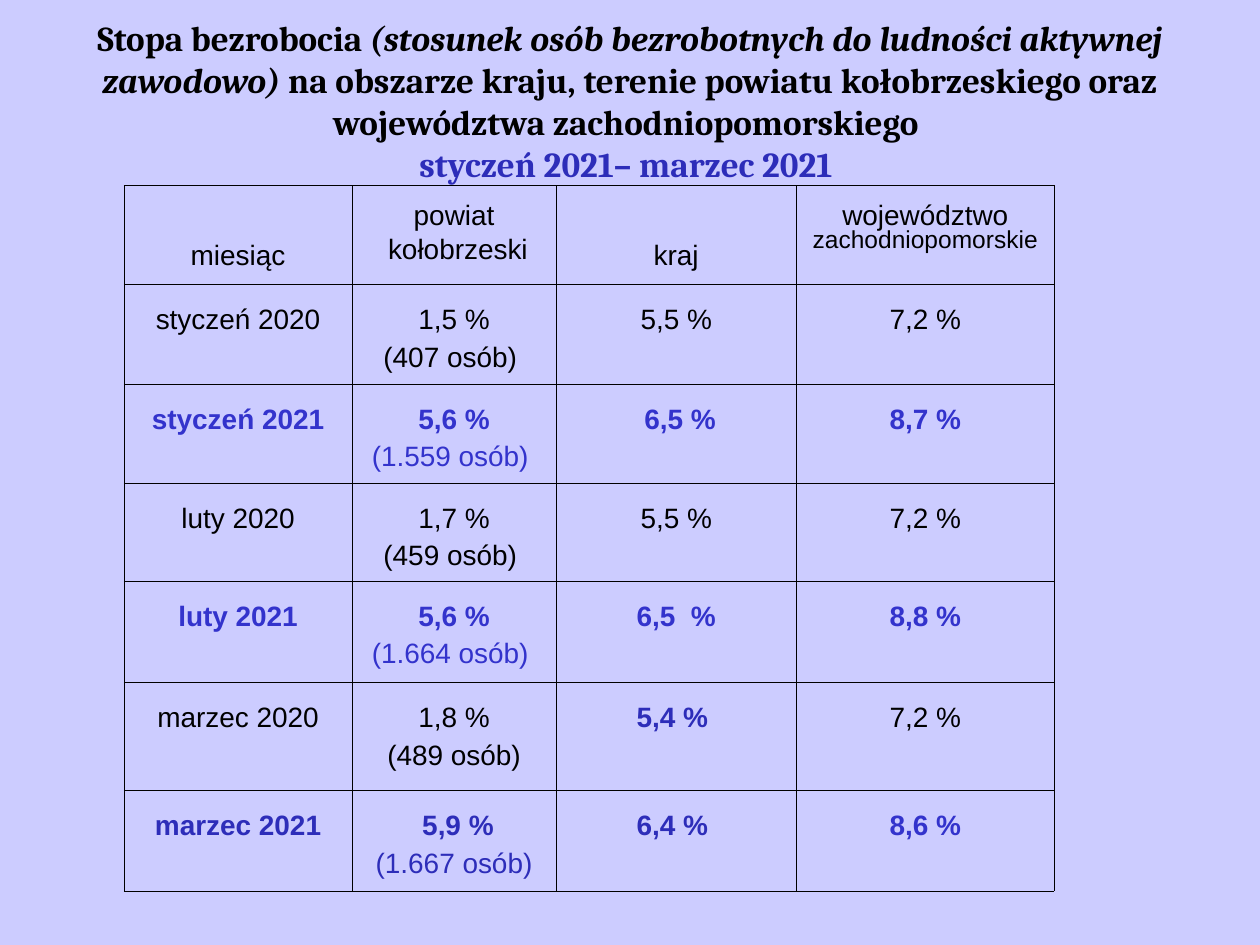
from dataclasses import dataclass

from lxml.etree import SubElement
from pptx import Presentation
from pptx.dml.color import RGBColor
from pptx.enum.text import MSO_ANCHOR, PP_ALIGN
from pptx.oxml.ns import qn
from pptx.util import Pt

BLACK = RGBColor(0x00, 0x00, 0x00)
BLUE = RGBColor(0x33, 0x33, 0xCC)
DARK_BLUE = RGBColor(0x2D, 0x2D, 0xB9)
LAVENDER = RGBColor(0xCC, 0xCC, 0xFF)

COLUMN_WIDTHS = (130.3, 116.6, 137.3, 147.4)
ROW_HEIGHTS = (56.7, 56.7, 56.7, 55.2, 57.8, 61.7, 57.8)
INNER_LINE, OUTER_LINE = 0.11, 0.23
HEADER_TOP, HEADER_LOW_TOP, BODY_TOP = 11.5, 34.4, 14.4


@dataclass(frozen=True)
class Run:
    text: str
    color: RGBColor = BLACK
    bold: bool = False
    italic: bool = False
    size: float = 16


@dataclass(frozen=True)
class CellText:
    paragraphs: tuple[tuple[Run, ...], ...]
    top: float = BODY_TOP
    space_before: float = 7


def header(*lines: tuple[Run, ...], top: float = HEADER_TOP) -> CellText:
    return CellText(lines, top, space_before=5)


def value(text: str, color: RGBColor = BLACK, people: str = "") -> CellText:
    """A cell whose coloured figures are bold, with an optional head count."""
    lines = [(Run(text, color, bold=color != BLACK),)]
    if people:
        lines.append((Run(people, color),))
    return CellText(tuple(lines))


def month_row(month: str, county: str, people: str, country: str, region: str,
              color: RGBColor = BLACK, country_color: RGBColor | None = None,
              region_color: RGBColor | None = None) -> tuple[CellText, ...]:
    return (value(month, color), value(county, color, people),
            value(country, country_color or color),
            value(region, region_color or color))


TITLE = (
    Run("Stopa bezrobocia ", bold=True, size=20),
    Run("(stosunek osób bezrobotnych do ludności aktywnej zawodowo)",
        bold=True, italic=True, size=20),
    Run(" na obszarze kraju, terenie powiatu kołobrzeskiego oraz "
        "województwa zachodniopomorskiego ", bold=True, size=20),
)
PERIOD = Run("styczeń 2021– marzec 2021 ", DARK_BLUE, bold=True, size=20)

ROWS = (
    (header((Run("miesiąc"),), top=HEADER_LOW_TOP),
     header((Run("powiat"),), (Run(" kołobrzeski"),)),
     header((Run("kraj"),), top=HEADER_LOW_TOP),
     header((Run("województwo "), Run("zachodniopomorskie", size=14)))),
    month_row("styczeń 2020", "1,5 %", "(407 osób) ", "5,5 %", "7,2 %"),
    month_row("styczeń 2021", "5,6 %", "(1.559 osób) ", " 6,5 %", "8,7 %", BLUE),
    month_row("luty 2020", "1,7 %", "(459 osób) ", "5,5 %", "7,2 %"),
    month_row("luty 2021", "5,6 %", "(1.664 osób) ", "6,5  %", "8,8 %", BLUE),
    month_row("marzec 2020", "1,8 %", "(489 osób)", "5,4 % ", "7,2 %",
              country_color=DARK_BLUE),
    month_row("marzec 2021", " 5,9 %", "(1.667 osób)", "6,4 % ", "8,6 %",
              DARK_BLUE, region_color=BLUE),
)


def add_run(paragraph, content: Run) -> None:
    run = paragraph.add_run()
    run.text = content.text
    run.font.size = Pt(content.size)
    run.font.bold = content.bold
    run.font.italic = content.italic
    run.font.color.rgb = content.color
    run.font.name = paragraph.font.name


def set_borders(cell, widths: dict[str, float]) -> None:
    properties = cell._tc.get_or_add_tcPr()
    for index, (side, width) in enumerate(widths.items()):
        line = SubElement(properties, qn(f"a:ln{side}"), w=str(int(Pt(width))))
        fill = SubElement(line, qn("a:solidFill"))
        SubElement(fill, qn("a:srgbClr"), val=str(BLACK))
        properties.insert(index, line)


def fill_cell(cell, content: CellText) -> None:
    cell.fill.background()
    cell.margin_left = cell.margin_right = Pt(7.2)
    cell.margin_top, cell.margin_bottom = Pt(content.top), Pt(3.6)
    cell.vertical_anchor = MSO_ANCHOR.TOP
    frame = cell.text_frame
    for index, runs in enumerate(content.paragraphs):
        paragraph = frame.add_paragraph() if index else frame.paragraphs[0]
        paragraph.alignment = PP_ALIGN.CENTER
        paragraph.line_spacing = 0.81
        paragraph.space_before = Pt(content.space_before)
        paragraph.font.name = "Arial"
        for run in runs:
            add_run(paragraph, run)


def add_title(slide) -> None:
    box = slide.shapes.add_textbox(Pt(36), Pt(9.4), Pt(648), Pt(96.5))
    frame = box.text_frame
    frame.word_wrap = True
    frame.vertical_anchor = MSO_ANCHOR.MIDDLE
    paragraph = frame.paragraphs[0]
    paragraph.alignment = PP_ALIGN.CENTER
    paragraph.font.name = "Cambria"
    for run in TITLE:
        add_run(paragraph, run)
    paragraph.add_line_break()
    add_run(paragraph, PERIOD)


def add_rate_table(slide) -> None:
    frame = slide.shapes.add_table(
        len(ROWS), len(COLUMN_WIDTHS), Pt(70.9), Pt(105.9),
        Pt(sum(COLUMN_WIDTHS)), Pt(sum(ROW_HEIGHTS)))
    table = frame.table
    table.first_row = table.horz_banding = False
    for column, width in zip(table.columns, COLUMN_WIDTHS):
        column.width = Pt(width)
    for row, height in zip(table.rows, ROW_HEIGHTS):
        row.height = Pt(height)
    last_column = len(COLUMN_WIDTHS) - 1
    for row_index, contents in enumerate(ROWS):
        for column_index, content in enumerate(contents):
            cell = table.cell(row_index, column_index)
            fill_cell(cell, content)
            set_borders(cell, {
                "L": INNER_LINE if column_index else OUTER_LINE,
                "R": OUTER_LINE if column_index == last_column else INNER_LINE,
                "T": INNER_LINE if row_index else OUTER_LINE,
                "B": INNER_LINE,
            })


def main() -> None:
    presentation = Presentation()
    presentation.slide_width, presentation.slide_height = Pt(720), Pt(540)
    slide = presentation.slides.add_slide(presentation.slide_layouts[6])
    background = slide.background.fill
    background.solid()
    background.fore_color.rgb = LAVENDER

    # Heading, then the unemployment rates
    add_title(slide)
    add_rate_table(slide)
    presentation.save("out.pptx")


if __name__ == "__main__":
    main()
